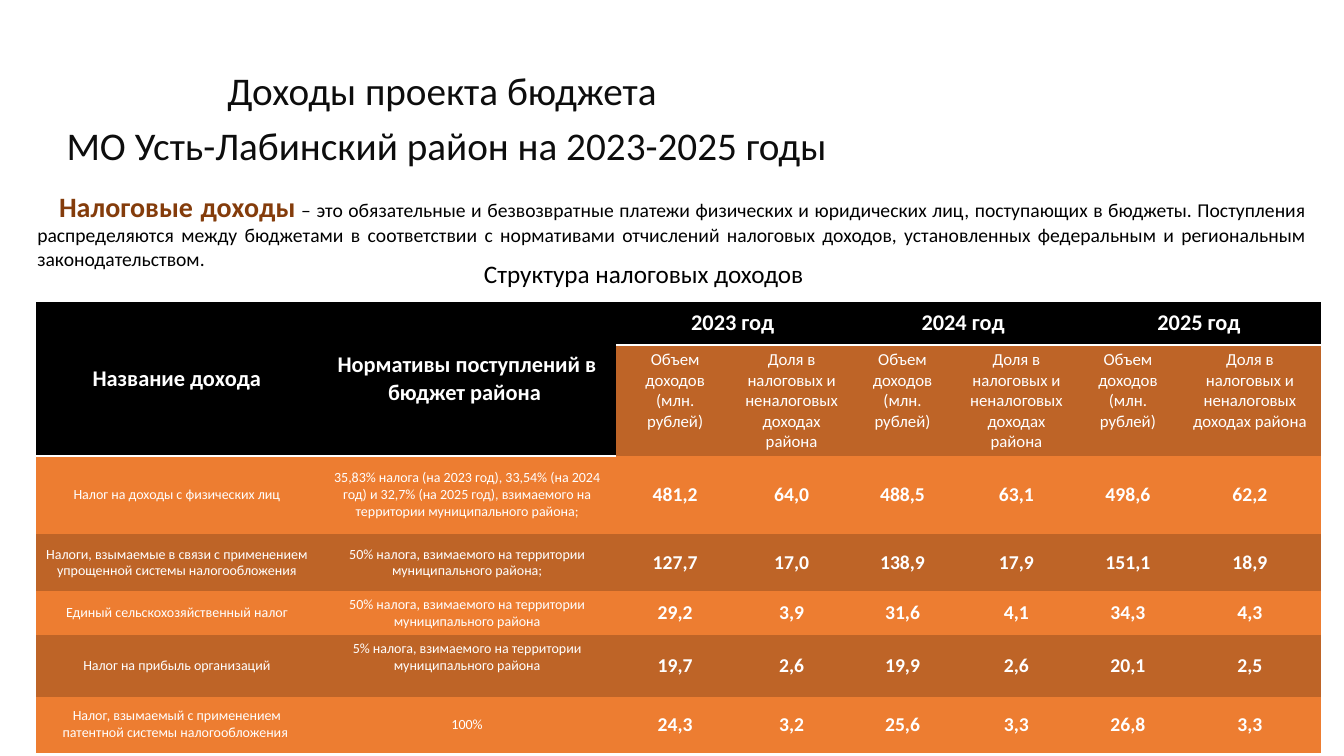
from lxml.etree import SubElement
from pptx import Presentation
from pptx.dml.color import RGBColor
from pptx.enum.text import MSO_ANCHOR, PP_ALIGN
from pptx.oxml import parse_xml
from pptx.oxml.ns import nsdecls, qn
from pptx.util import Cm, Pt

COLORS = {
    "black": "000000",
    "title": "0D0D0D",
    "term": "843C0B",
    "white": "FFFFFF",
    "orange": "ED7D31",
    "dark_orange": "BE6427",
}
NO_STYLE = "{2D5ABB26-0587-4C30-8999-92F81FD0307C}"


def style_run(span, size, color, bold=False):
    span.font.name = "Calibri"
    span.font.size = Pt(size)
    span.font.bold = bold
    span.font.color.rgb = RGBColor.from_string(COLORS[color])


def add_text(slide, left, top, width, height, lines, align):
    """Add a wrapping box; each line is a list of (text, size, color, bold) runs."""
    box = slide.shapes.add_textbox(Cm(left), Cm(top), Cm(width), Cm(height))
    frame = box.text_frame
    frame.word_wrap = True
    for index, line in enumerate(lines):
        para = frame.add_paragraph() if index else frame.paragraphs[0]
        para.alignment = align
        if index:
            para.space_before = Pt(line[0][1] * 0.2)
        for text, *style in line:
            span = para.add_run()
            span.text = text
            style_run(span, *style)
    return box


deck = Presentation()
deck.slide_width, deck.slide_height = Cm(33.87), Cm(19.05)
slide = deck.slides.add_slide(deck.slide_layouts[6])

definition = add_text(slide, 0.69, 4.65, 32.49, 2.31, [[
    ("Налоговые доходы", 20, "term", True),
    (" ", 14, "term", True),
    ("– это обязательные и безвозвратные платежи физических и юридических лиц, "
     "поступающих в бюджеты. Поступления распределяются между бюджетами в соответствии "
     "с нормативами отчислений налоговых доходов, установленных федеральным и "
     "региональным законодательством.", 14, "black", False),
]], PP_ALIGN.JUSTIFY)
definition.text_frame.paragraphs[0]._p.get_or_add_pPr().set("indent", str(Cm(0.55)))

add_text(slide, 7.29, 6.38, 18.01, 1.14,
         [[("Структура налоговых доходов ", 18, "black")]], PP_ALIGN.CENTER)
add_text(slide, 0, 1.55, 22.5, 1.14,
         [[("Доходы проекта бюджета ", 28, "title")],
          [("МО Усть-Лабинский район на 2023-2025 годы", 28, "title")]], PP_ALIGN.CENTER)

VOLUME = "Объем доходов (млн. рублей)"
SHARE = "Доля в налоговых и неналоговых доходах района"
rows = [
    ["Название дохода", "Нормативы поступлений в бюджет района ",
     "2023 год", "", "2024 год", "", "2025 год", ""],
    ["", ""] + [VOLUME, SHARE] * 3,
    ["Налог на доходы с физических лиц",
     "35,83% налога (на 2023 год), 33,54% (на 2024 год) и 32,7% (на 2025 год), "
     "взимаемого на территории муниципального района;",
     "481,2", "64,0", "488,5", "63,1", "498,6", "62,2"],
    ["Налоги, взымаемые в связи с применением упрощенной системы налогообложения",
     "50% налога, взимаемого на территории муниципального района;",
     "127,7", "17,0", "138,9", "17,9", "151,1", "18,9"],
    ["Единый сельскохозяйственный налог",
     "50% налога, взимаемого на территории муниципального района",
     "29,2", "3,9", "31,6", "4,1", "34,3", "4,3"],
    ["Налог на прибыль организаций",
     "5% налога, взимаемого на территории муниципального района",
     "19,7", "2,6", "19,9", "2,6", "20,1", "2,5"],
    ["Налог, взымаемый с применением патентной системы налогообложения ", "100%",
     "24,3", "3,2", "25,6", "3,3", "26,8", "3,3"],
]
column_widths = [7.11, 7.52, 2.97, 2.9, 2.69, 3.05, 2.57, 3.58]
row_heights = [1.09, 2.77, 1.98, 1.43, 1.11, 1.55, 1.41]

table_frame = slide.shapes.add_table(
    len(rows), len(column_widths), Cm(0.9), Cm(7.6),
    Cm(sum(column_widths)), Cm(sum(row_heights)))
table = table_frame.table
for style_id in table_frame._element.iter(qn("a:tableStyleId")):
    style_id.text = NO_STYLE
for column, width in zip(table.columns, column_widths):
    column.width = Cm(width)
for row, height in zip(table.rows, row_heights):
    row.height = Cm(height)

for r, texts in enumerate(rows):
    for c, text in enumerate(texts):
        cell = table.cell(r, c)
        is_header = r == 0 or (r == 1 and c < 2)
        if is_header:
            fill, size, bold = "black", 16, True
        elif r == 1:
            fill, size, bold = "dark_orange", 12, False
        else:
            fill = "dark_orange" if r % 2 else "orange"
            size, bold = (10, False) if c < 2 else (14, True)
        cell.fill.solid()
        cell.fill.fore_color.rgb = RGBColor.from_string(COLORS[fill])
        cell.vertical_anchor = MSO_ANCHOR.TOP if r == 1 and c > 1 else MSO_ANCHOR.MIDDLE
        if is_header:
            border = parse_xml(f'<a:lnB {nsdecls("a")} w="{Pt(2)}"/>')
            solid = SubElement(border, qn("a:solidFill"))
            SubElement(solid, qn("a:srgbClr"), val=COLORS["white"])
            cell._tc.get_or_add_tcPr().insert(0, border)
        if text:
            para = cell.text_frame.paragraphs[0]
            para.text = text
            para.alignment = PP_ALIGN.CENTER
            style_run(para.runs[0], size, "white", bold)

for c in range(2):
    table.cell(0, c).merge(table.cell(1, c))
for c in range(2, 8, 2):
    table.cell(0, c).merge(table.cell(0, c + 1))
# The rate for the profit tax sits above the middle of its row
table.cell(5, 1).margin_bottom = Cm(0.56)

deck.save("out.pptx")
